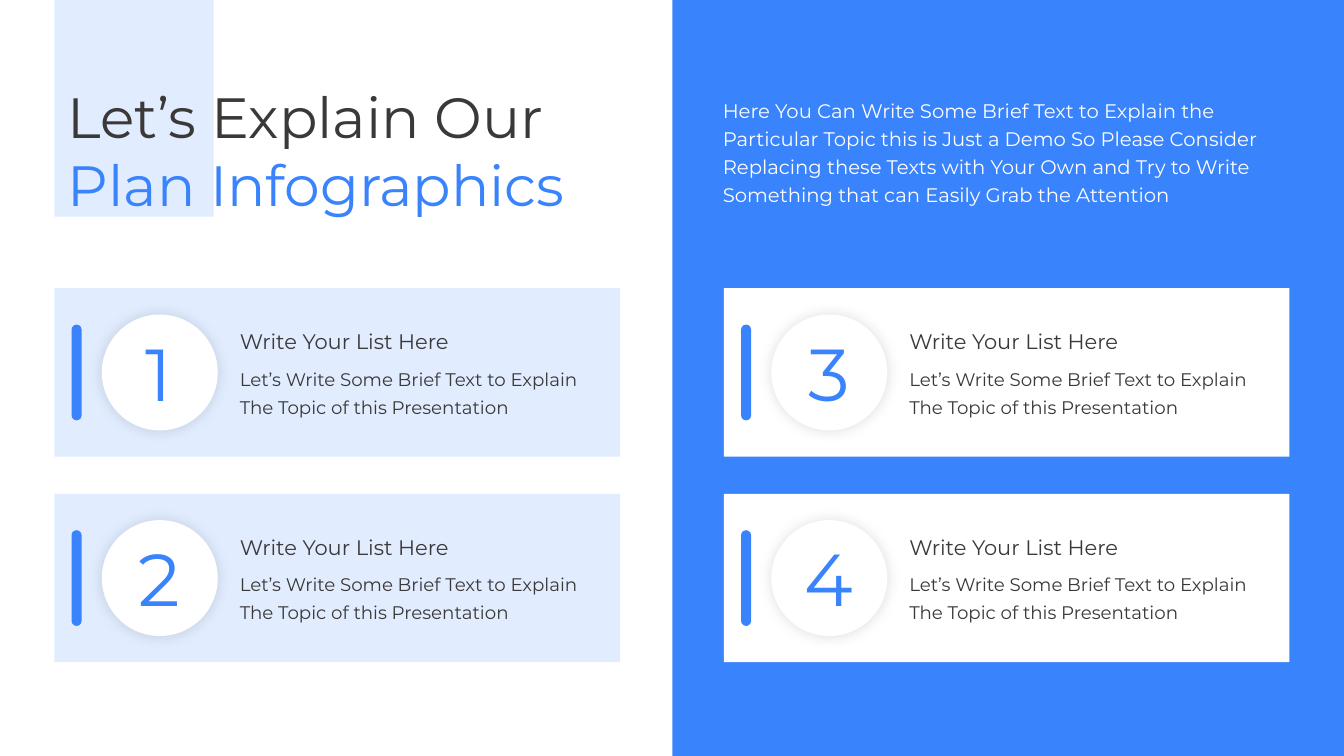
from lxml import etree
from pptx import Presentation
from pptx.dml.color import RGBColor
from pptx.enum import shapes, text
from pptx.oxml.ns import qn
from pptx.util import Inches, Pt

COLORS = {"blue": "3983FC", "pale": "E1ECFF", "white": "FFFFFF", "dark": "3B3838", "black": "000000"}
INTRO = [
    "Here You Can Write Some Brief Text to Explain the",
    "Particular Topic this is Just a Demo So Please Consider",
    "Replacing these Texts with Your Own and Try to Write",
    "Something that can Easily Grab the Attention",
]
CARD_HEADING = "Write Your List Here"
CARD_LINES = ["Let’s Write Some Brief Text to Explain", "The Topic of this Presentation"]
CARD_LEFTS = (0.54, 7.18)
CARD_TOPS = (2.86, 4.9)


def write(frame, lines, size, colors, spacings=(1.0,), align=text.PP_ALIGN.LEFT):
    """Fill a frame, one paragraph a line; the last colour and spacing carry on."""
    frame.word_wrap = True
    frame.auto_size = text.MSO_AUTO_SIZE.NONE
    frame.vertical_anchor = text.MSO_ANCHOR.TOP
    for index, line in enumerate(lines):
        paragraph = frame.paragraphs[0] if index == 0 else frame.add_paragraph()
        paragraph.alignment = align
        paragraph.line_spacing = spacings[min(index, len(spacings) - 1)]
        paragraph.space_before = Pt(0)
        run = paragraph.add_run()
        run.text = line
        run.font.name = "Montserrat"
        run.font.size = Pt(size)
        run.font.color.rgb = RGBColor.from_string(COLORS[colors[min(index, len(colors) - 1)]])


class InfographicSlide:
    def __init__(self, presentation):
        self.slide = presentation.slides.add_slide(presentation.slide_layouts[5])

    def block(self, left, top, width, height, color, kind=shapes.MSO_SHAPE.RECTANGLE):
        shape = self.slide.shapes.add_shape(
            kind, Inches(left), Inches(top), Inches(width), Inches(height))
        shape.shadow.inherit = False
        shape.fill.solid()
        shape.fill.fore_color.rgb = RGBColor.from_string(COLORS[color])
        shape.line.fill.background()
        return shape

    def disc(self, left, top, diameter):
        """Draw a white circle with a soft glow-like shadow."""
        circle = self.block(left, top, diameter, diameter, "white", shapes.MSO_SHAPE.OVAL)
        effects = circle._element.spPr.find(qn("a:effectLst"))
        shadow = etree.SubElement(effects, qn("a:outerShdw"), blurRad=str(Pt(10)),
                                  dist="0", dir="0", algn="ctr", rotWithShape="0")
        color = etree.SubElement(shadow, qn("a:srgbClr"), val=COLORS["black"])
        etree.SubElement(color, qn("a:alpha"), val="12000")

    def label(self, left, top, width, height, lines, **style):
        box = self.slide.shapes.add_textbox(
            Inches(left), Inches(top), Inches(width), Inches(height))
        write(box.text_frame, lines, **style)

    def title(self, left, top, width, height, lines, **style):
        """Format the title placeholder and bring it in front of the blocks."""
        title = self.slide.shapes.title
        title.left, title.top = Inches(left), Inches(top)
        title.width, title.height = Inches(width), Inches(height)
        write(title.text_frame, lines, **style)
        self.slide.shapes._spTree.append(title._element)

    def card(self, left, top, number, color):
        self.block(left, top, 5.61, 1.67, color)
        self.disc(left + 0.47, top + 0.26, 1.15)
        self.label(left + 0.54, top + 0.34, 1, 0.98, [str(number)], size=52.5,
                   colors=["blue"], align=text.PP_ALIGN.CENTER)
        bar = self.block(left + 0.17, top + 0.36, 0.1, 0.95, "blue",
                         shapes.MSO_SHAPE.ROUNDED_RECTANGLE)
        bar.adjustments[0] = 0.5
        self.label(left + 1.74, top + 0.35, 3.8, 0.35, [CARD_HEADING], size=15, colors=["dark"])
        self.label(left + 1.74, top + 0.74, 3.8, 0.58, CARD_LINES, size=13, colors=["dark"],
                   spacings=[1.0, Pt(20)])


def main():
    presentation = Presentation()
    presentation.slide_width, presentation.slide_height = Inches(13.33), Inches(7.5)
    page = InfographicSlide(presentation)

    page.block(0.54, 0, 1.58, 2.15, "pale")
    page.block(6.67, 0, 6.66, 7.5, "blue")
    page.title(0.57, 0.76, 5.9, 1.46, ["Let’s Explain Our", "Plan Infographics"],
               size=40.5, colors=["dark", "blue"])
    page.label(7.07, 0.89, 5.62, 1.2, INTRO, size=14, colors=["white"], spacings=[Pt(20)])

    for column, (left, color) in enumerate(zip(CARD_LEFTS, ("pale", "white"))):
        for row, top in enumerate(CARD_TOPS):
            page.card(left, top, column * len(CARD_TOPS) + row + 1, color)

    presentation.save("out.pptx")


if __name__ == "__main__":
    main()
